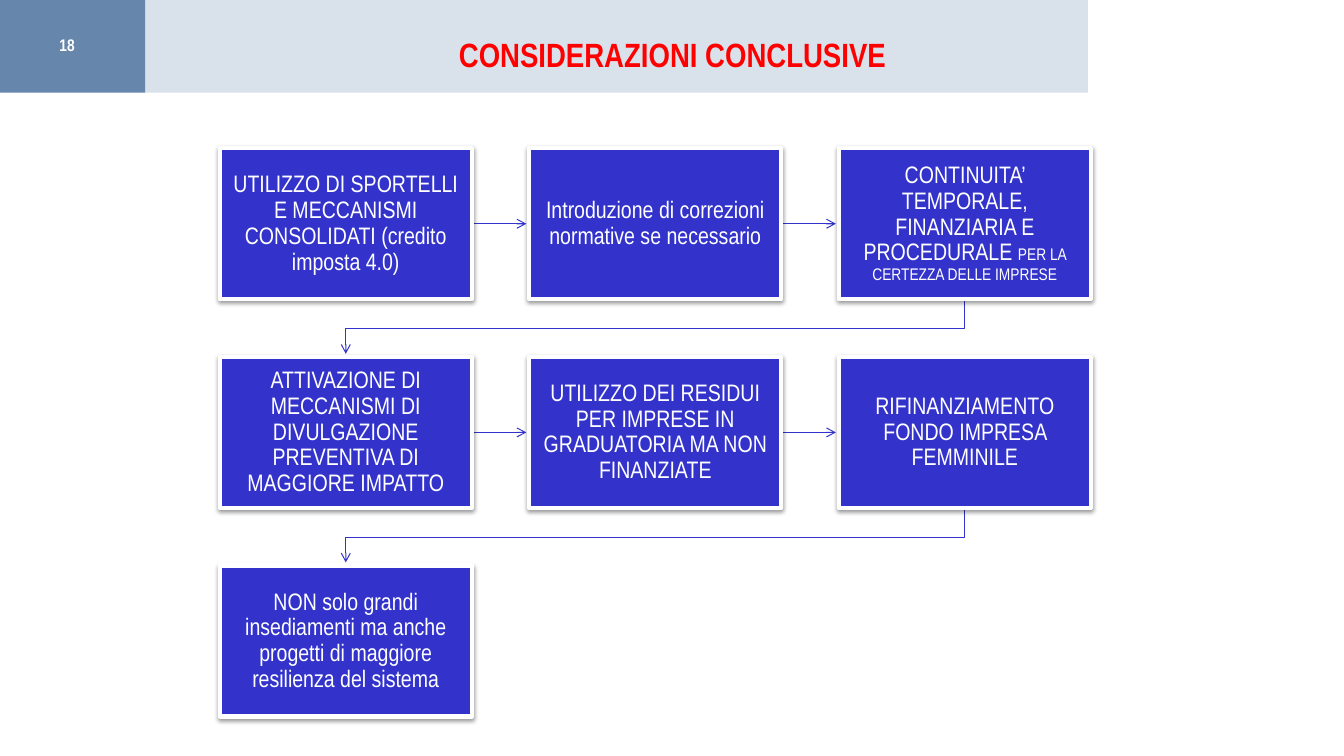
from dataclasses import dataclass

from pptx import Presentation
from pptx.dml.color import RGBColor
from pptx.enum.shapes import MSO_CONNECTOR, MSO_SHAPE
from pptx.enum.text import MSO_ANCHOR, PP_ALIGN
from pptx.oxml import parse_xml
from pptx.oxml.ns import nsdecls, qn
from pptx.oxml.xmlchemy import BaseOxmlElement
from pptx.shapes.autoshape import Shape
from pptx.slide import Slide
from pptx.text.text import _Paragraph as Paragraph
from pptx.util import Inches, Pt

FONT = "Arial Narrow"
WHITE = RGBColor(0xFF, 0xFF, 0xFF)
RED = RGBColor(0xFF, 0x00, 0x00)
BLUE = RGBColor(0x33, 0x33, 0xCC)
HEADER_LIGHT = RGBColor(0xD9, 0xE1, 0xEB)
HEADER_DARK = RGBColor(0x66, 0x86, 0xAC)

COLUMNS = 3
GRID_LEFT, GRID_TOP = 2.18, 1.47
BOX_WIDTH, BOX_HEIGHT = 2.5, 1.5
COLUMN_STEP, ROW_STEP = 3.07, 2.07
ARROW_LENGTH = 0.54
BEND_DROP = 0.29


@dataclass(frozen=True)
class Step:
    text: str
    small_text: str = ""


STEPS = [
    Step("UTILIZZO DI SPORTELLI E MECCANISMI CONSOLIDATI (credito imposta 4.0)"),
    Step("Introduzione di correzioni normative se necessario"),
    Step("CONTINUITA’ TEMPORALE, FINANZIARIA E PROCEDURALE ",
         "PER LA CERTEZZA DELLE IMPRESE"),
    Step("ATTIVAZIONE DI MECCANISMI DI DIVULGAZIONE PREVENTIVA DI MAGGIORE IMPATTO"),
    Step("UTILIZZO DEI RESIDUI PER IMPRESE IN GRADUATORIA MA NON FINANZIATE"),
    Step("RIFINANZIAMENTO FONDO IMPRESA FEMMINILE"),
    Step("NON solo grandi insediamenti ma anche progetti di maggiore resilienza del sistema"),
]


def add_rectangle(slide: Slide, left: float, top: float, width: float,
                  height: float, color: RGBColor) -> Shape:
    shape = slide.shapes.add_shape(MSO_SHAPE.RECTANGLE, Inches(left), Inches(top),
                                   Inches(width), Inches(height))
    shape.shadow.inherit = False
    shape.fill.solid()
    shape.fill.fore_color.rgb = color
    shape.line.fill.background()
    return shape


def format_paragraph(paragraph: Paragraph, size: float, color: RGBColor,
                     bold: bool = False) -> None:
    paragraph.alignment = PP_ALIGN.CENTER
    for run in paragraph.runs:
        run.font.name = FONT
        run.font.size = Pt(size)
        run.font.bold = bold
        run.font.color.rgb = color


def add_label(slide: Slide, left: float, top: float, width: float, height: float,
              text: str, size: float, color: RGBColor) -> None:
    box = slide.shapes.add_textbox(Inches(left), Inches(top),
                                   Inches(width), Inches(height))
    frame = box.text_frame
    frame.word_wrap = True
    frame.margin_top = frame.margin_bottom = Inches(0.04)
    frame.text = text
    format_paragraph(frame.paragraphs[0], size, color, bold=True)


def add_arrowhead(properties: BaseOxmlElement) -> None:
    properties.find(qn("a:ln")).append(
        parse_xml(f'<a:tailEnd {nsdecls("a")} type="arrow"/>'))


def add_straight_arrow(slide: Slide, left: float, middle: float) -> None:
    connector = slide.shapes.add_connector(
        MSO_CONNECTOR.STRAIGHT, Inches(left), Inches(middle),
        Inches(left + ARROW_LENGTH), Inches(middle))
    connector.line.color.rgb = BLUE
    connector.line.width = Pt(0.75)
    properties = connector.element.spPr
    add_arrowhead(properties)
    properties.append(parse_xml(f'<a:effectLst {nsdecls("a")}/>'))


def add_return_arrow(slide: Slide, start: float, end: float, top: float) -> None:
    """Lead from the end of one row down to the start of the next."""
    bend = top + BEND_DROP
    points = [(start, bend), (end, bend), (end, top + ARROW_LENGTH)]
    builder = slide.shapes.build_freeform(Inches(start), Inches(top))
    builder.add_line_segments([(Inches(x), Inches(y)) for x, y in points], close=False)
    shape = builder.convert_to_shape()
    shape.shadow.inherit = False
    shape.fill.background()
    shape.line.color.rgb = BLUE
    shape.line.width = Pt(0.75)
    add_arrowhead(shape.element.spPr)


def add_step_box(slide: Slide, step: Step, left: float, top: float) -> None:
    shape = add_rectangle(slide, left, top, BOX_WIDTH, BOX_HEIGHT, BLUE)
    shape.line.color.rgb = WHITE
    shape.line.width = Pt(3)
    shape.element.spPr.find(qn("a:effectLst")).append(parse_xml(
        f'<a:outerShdw {nsdecls("a")} blurRad="40000" dist="20000" dir="5400000" '
        'rotWithShape="0"><a:srgbClr val="000000"><a:alpha val="38000"/>'
        '</a:srgbClr></a:outerShdw>'))
    frame = shape.text_frame
    frame.word_wrap = True
    frame.vertical_anchor = MSO_ANCHOR.MIDDLE
    frame.margin_left = frame.margin_right = Inches(0.12)
    frame.margin_top = frame.margin_bottom = Inches(0.13)
    frame.text = step.text
    paragraph = frame.paragraphs[0]
    paragraph.line_spacing = 0.9
    if step.small_text:
        paragraph.add_run().text = step.small_text
    format_paragraph(paragraph, 17, WHITE)
    if step.small_text:
        paragraph.runs[-1].font.size = Pt(12)


def add_flow(slide: Slide) -> None:
    for index, step in enumerate(STEPS):
        row, column = divmod(index, COLUMNS)
        left = GRID_LEFT + column * COLUMN_STEP
        top = GRID_TOP + row * ROW_STEP
        if index < len(STEPS) - 1:
            if column < COLUMNS - 1:
                add_straight_arrow(slide, left + BOX_WIDTH, top + BOX_HEIGHT / 2)
            else:
                add_return_arrow(slide, left + BOX_WIDTH / 2,
                                 GRID_LEFT + BOX_WIDTH / 2, top + BOX_HEIGHT)
        add_step_box(slide, step, left, top)


def main() -> None:
    presentation = Presentation()
    presentation.slide_width = Inches(13.33)
    presentation.slide_height = Inches(7.5)
    slide = presentation.slides.add_slide(presentation.slide_layouts[6])
    add_rectangle(slide, 1.44, 0, 9.35, 0.92, HEADER_LIGHT)
    add_rectangle(slide, 0, 0, 1.44, 0.92, HEADER_DARK)
    add_label(slide, 0, 0.3, 1.33, 0.27, "18", 12, WHITE)
    add_label(slide, 0.67, 0.3, 12, 0.5, "CONSIDERAZIONI CONCLUSIVE", 24, RED)
    add_flow(slide)
    presentation.save("out.pptx")


if __name__ == "__main__":
    main()
